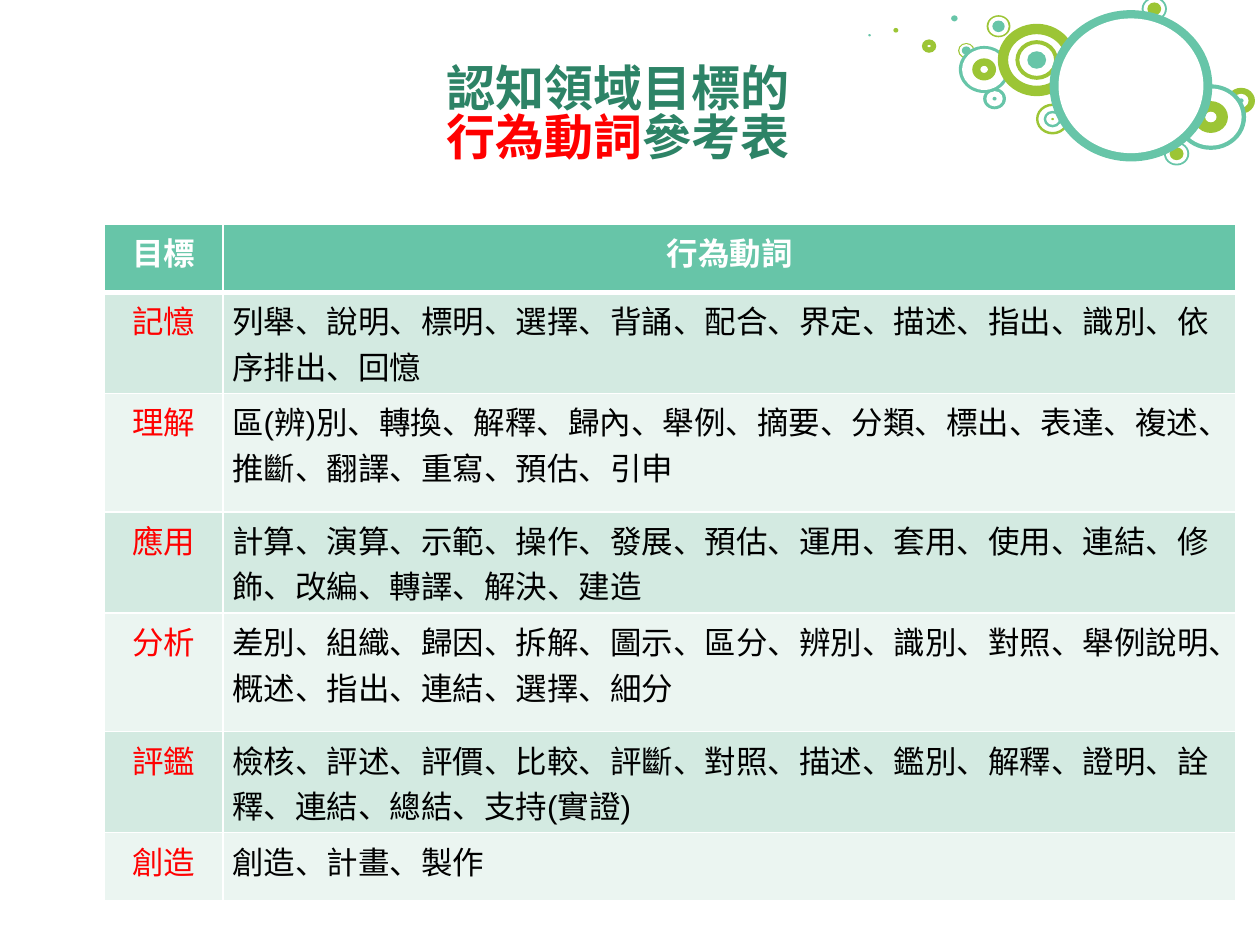
from lxml.etree import SubElement
from pptx import Presentation
from pptx.dml.color import RGBColor
from pptx.enum.shapes import MSO_SHAPE as Shape
from pptx.enum.text import MSO_ANCHOR as Anchor, MSO_AUTO_SIZE as AutoSize, PP_ALIGN as Align
from pptx.oxml.ns import qn
from pptx.util import Cm, Pt

TEAL = RGBColor(0x67, 0xC5, 0xA8)
GREEN = RGBColor(0x9C, 0xC5, 0x35)
DARK_TEAL = RGBColor(0x2D, 0x83, 0x66)
RED = RGBColor(0xFF, 0, 0)
BLACK = RGBColor(0, 0, 0)
WHITE = RGBColor(0xFF, 0xFF, 0xFF)
BANDS = (RGBColor(0xD3, 0xEA, 0xE1), RGBColor(0xEB, 0xF5, 0xF1))

CJK_FONT = "Noto Sans CJK SC"
FLATTENING = 0.93  # height of every circle relative to its width

# Centre x, centre y, then (width, colour[, ring thickness]) from back to front
CIRCLES = [
    (23.27, 0.18, [(0.51, TEAL), (0.43, WHITE), (0.28, GREEN)]),
    (18.73, 0.93, [(0.29, GREEN, 0.11)]),
    (19.24, 0.37, [(0.13, TEAL)]),
    (18.06, 0.61, [(0.1, GREEN)]),
    (17.53, 0.71, [(0.05, TEAL)]),
    (19.48, 1.02, [(0.33, GREEN), (0.28, WHITE), (0.18, TEAL)]),
    (20.05, 1.99, [(0.46, TEAL), (0.33, WHITE), (0.08, TEAL)]),
    (19.84, 1.4, [(1.02, TEAL), (0.89, WHITE), (0.48, GREEN), (0.15, WHITE)]),
    (25.02, 2.03, [(0.56, GREEN), (0.3, WHITE), (0.1, TEAL)]),
    (24.41, 2.36, [(1.42, TEAL), (1.24, WHITE), (0.69, GREEN), (0.23, WHITE)]),
    (21.22, 2.4, [(0.67, GREEN, 0.05), (0.36, TEAL, 0.05), (0.05, GREEN)]),
    (20.9, 1.21, [(1.25, WHITE), (1.57, GREEN, 0.21), (0.86, GREEN, 0.08), (0.38, TEAL)]),
    (23.72, 3.1, [(0.51, TEAL), (0.43, WHITE), (0.28, GREEN)]),
    (20.13, 0.53, [(0.48, GREEN), (0.41, WHITE), (0.25, TEAL)]),
    (22.8, 1.73, [(3.28, TEAL), (2.92, WHITE)]),
]

# Row height, goal, verbs
ROWS = [
    (1.37, "目標", "行為動詞"),
    (2.01, "記憶", "列舉、說明、標明、選擇、背誦、配合、界定、描述、指出、識別、依序排出、回憶"),
    (2.39, "理解", "區(辨)別、轉換、解釋、歸內、舉例、摘要、分類、標出、表達、複述、推斷、翻譯、重寫、預估、引申"),
    (1.8, "應用", "計算、演算、示範、操作、發展、預估、運用、套用、使用、連結、修飾、改編、轉譯、解決、建造"),
    (2.39, "分析", "差別、組織、歸因、拆解、圖示、區分、辨別、識別、對照、舉例說明、概述、指出、連結、選擇、細分"),
    (1.8, "評鑑", "檢核、評述、評價、比較、評斷、對照、描述、鑑別、解釋、證明、詮釋、連結、總結、支持(實證)"),
    (1.37, "創造", "創造、計畫、製作"),
]
COLUMN_WIDTHS = (2.39, 20.42)


def add_text(paragraph, text, size=18, color=BLACK, bold=False, font="Arial"):
    run = paragraph.add_run()
    run.text = text
    run.font.size = Pt(size)
    run.font.bold = bold
    run.font.name = font
    run.font.color.rgb = color
    SubElement(run.font._element, qn("a:ea"), typeface=CJK_FONT)


def add_circle(slide, center_x, center_y, width, color, thickness=None):
    height = width * FLATTENING
    kind = Shape.DONUT if thickness else Shape.OVAL
    shape = slide.shapes.add_shape(
        kind, Cm(center_x - width / 2), Cm(center_y - height / 2), Cm(width), Cm(height))
    if thickness:
        shape.adjustments[0] = thickness / height
    shape.shadow.inherit = False
    shape.fill.solid()
    shape.fill.fore_color.rgb = color
    shape.line.fill.background()


def format_title(slide):
    title = slide.shapes.title
    slide.shapes._spTree.append(title._element)  # in front of the circles
    title.left, title.top, title.width, title.height = Cm(3.91), Cm(0.76), Cm(17.09), Cm(3.18)
    frame = title.text_frame
    frame.auto_size = AutoSize.NONE
    frame.vertical_anchor = Anchor.MIDDLE
    paragraph = frame.paragraphs[0]
    paragraph.alignment = Align.CENTER
    paragraph.line_spacing = 0.83
    style = dict(size=28, bold=True, font=CJK_FONT)
    add_text(paragraph, "認知領域目標的", color=DARK_TEAL, **style)
    paragraph.add_line_break()
    add_text(paragraph, "行為動詞", color=RED, **style)
    add_text(paragraph, "參考表", color=DARK_TEAL, **style)


def set_borders(cell, **widths):
    """Draw white borders; keywords L, R, T and B give widths in points."""
    properties = cell._tc.get_or_add_tcPr()
    for side in "LRTB":
        line = SubElement(properties, qn(f"a:ln{side}"), w=str(Pt(widths.get(side, 1))))
        fill = SubElement(line, qn("a:solidFill"))
        SubElement(fill, qn("a:srgbClr"), val=str(WHITE))


def fill_cell(cell, text, fill, align, **style):
    cell.margin_left = cell.margin_right = Cm(0.18)
    cell.margin_top = cell.margin_bottom = Cm(0.1)
    cell.fill.solid()
    cell.fill.fore_color.rgb = fill
    paragraph = cell.text_frame.paragraphs[0]
    paragraph.alignment = align
    add_text(paragraph, text, **style)


def add_verb_table(slide):
    table = slide.shapes.add_table(
        len(ROWS), len(COLUMN_WIDTHS), Cm(2.11), Cm(4.52),
        Cm(sum(COLUMN_WIDTHS)), Cm(sum(row[0] for row in ROWS))).table
    for column, width in zip(table.columns, COLUMN_WIDTHS):
        column.width = Cm(width)
    for index, (height, *texts) in enumerate(ROWS):
        table.rows[index].height = Cm(height)
        header = index == 0
        for column, text in enumerate(texts):
            cell = table.cell(index, column)
            # Borders come before the fill in the cell properties
            set_borders(cell, B=3 if header else 1, T=3 if index == 1 else 1)
            if header:
                fill_cell(cell, text, TEAL, Align.CENTER, color=WHITE, bold=True)
            else:
                goal = column == 0
                fill_cell(cell, text, BANDS[(index - 1) % 2],
                          Align.CENTER if goal else Align.LEFT,
                          color=RED if goal else BLACK)


def main():
    presentation = Presentation()
    presentation.slide_width, presentation.slide_height = Cm(25.4), Cm(19.05)
    slide = presentation.slides.add_slide(presentation.slide_layouts[5])

    # Corner decoration
    for center_x, center_y, layers in CIRCLES:
        for layer in layers:
            add_circle(slide, center_x, center_y, *layer)

    format_title(slide)
    add_verb_table(slide)
    presentation.save("out.pptx")


if __name__ == "__main__":
    main()
